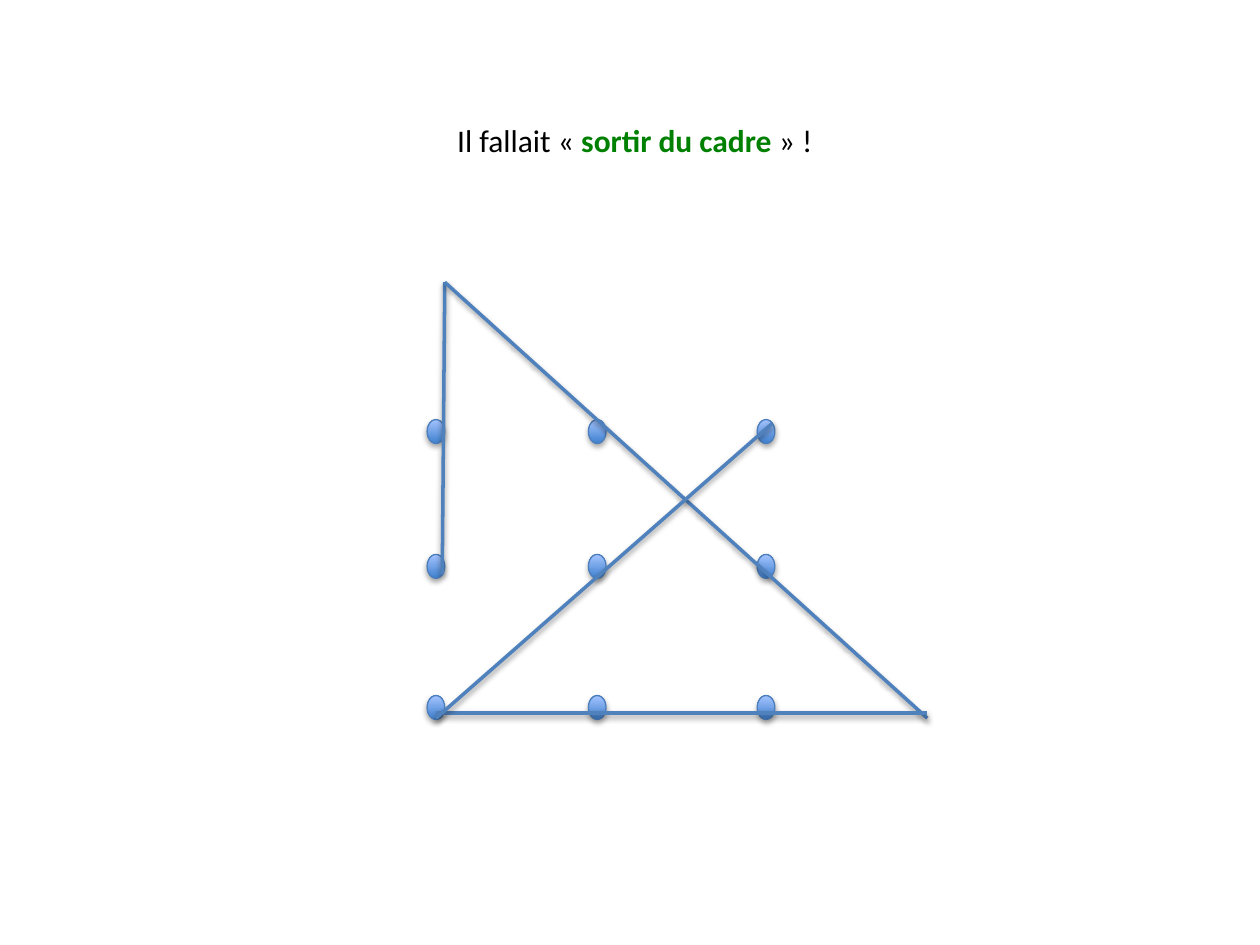
from itertools import product

from lxml.etree import SubElement
from pptx import Presentation
from pptx.dml.color import RGBColor
from pptx.enum.shapes import MSO_CONNECTOR, MSO_SHAPE
from pptx.enum.text import MSO_AUTO_SIZE
from pptx.oxml.ns import qn
from pptx.util import Inches, Pt

BLACK = RGBColor(0x00, 0x00, 0x00)
GREEN = RGBColor(0x00, 0x80, 0x00)
DOT_DARK = RGBColor(0x3F, 0x80, 0xCE)
DOT_LIGHT = RGBColor(0xA4, 0xC4, 0xFF)
DOT_EDGE = RGBColor(0x4B, 0x7E, 0xBC)
STROKE = RGBColor(0x4F, 0x81, 0xBD)

TITLE_RUNS = [
    ("Il fallait « ", {"color": BLACK, "bold": False}),
    ("sortir du cadre", {"color": GREEN, "bold": True}),
    (" » !", {"color": BLACK, "bold": False}),
]
TITLE_BOX = (3.53, 0.91, 3.09, 0.4)

DOT_COLUMNS = [3.39, 4.67, 6.01]
DOT_ROWS = [3.33, 4.4, 5.52]
DOT_SIZE = (0.14, 0.19)

STROKES = [
    ((3.51, 4.56), (3.53, 2.24)),
    ((3.53, 2.24), (7.36, 5.7)),
    ((7.36, 5.66), (3.46, 5.66)),
    ((3.46, 5.7), (6.13, 3.36)),
]


def inches(*values):
    return [Inches(v) for v in values]


def add_shadow(s, distance, opacity):
    """Soft shadow straight below; distance in points, opacity in percent."""
    effects = SubElement(s._element.spPr, qn("a:effectLst"))
    shadow = SubElement(effects, qn("a:outerShdw"), blurRad=str(Pt(3.15)),
                        dist=str(Pt(distance)), dir="5400000", rotWithShape="0")
    color = SubElement(shadow, qn("a:srgbClr"), val=str(BLACK))
    SubElement(color, qn("a:alpha"), val=str(opacity * 1000))


def add_dot(slide, left, top):
    s = slide.shapes.add_shape(MSO_SHAPE.OVAL, *inches(left, top, *DOT_SIZE))
    s.fill.gradient()
    s.fill.gradient_angle = 90
    for stop, color in zip(s.fill.gradient_stops, (DOT_DARK, DOT_LIGHT)):
        stop.color.rgb = color
    s.line.color.rgb = DOT_EDGE
    s.line.width = Pt(0.75)
    add_shadow(s, 1.8, 35)


def add_stroke(slide, start, end):
    s = slide.shapes.add_connector(MSO_CONNECTOR.STRAIGHT, *inches(*start, *end))
    s.line.color.rgb = STROKE
    s.line.width = Pt(2)
    add_shadow(s, 1.6, 38)


def add_title(slide):
    tf = slide.shapes.add_textbox(*inches(*TITLE_BOX)).text_frame
    tf.word_wrap = False
    tf.auto_size = MSO_AUTO_SIZE.SHAPE_TO_FIT_TEXT
    for text, style in TITLE_RUNS:
        r = tf.paragraphs[0].add_run()
        r.text = text
        r.font.name = "Calibri"
        r.font.size = Pt(18)
        r.font.bold = style["bold"]
        r.font.color.rgb = style["color"]


def main():
    prs = Presentation()
    prs.slide_width, prs.slide_height = inches(10, 7.5)
    slide = prs.slides.add_slide(prs.slide_layouts[6])
    for top, left in product(DOT_ROWS, DOT_COLUMNS):
        add_dot(slide, left, top)
    for start, end in STROKES:
        add_stroke(slide, start, end)
    add_title(slide)
    prs.save("out.pptx")


if __name__ == "__main__":
    main()
